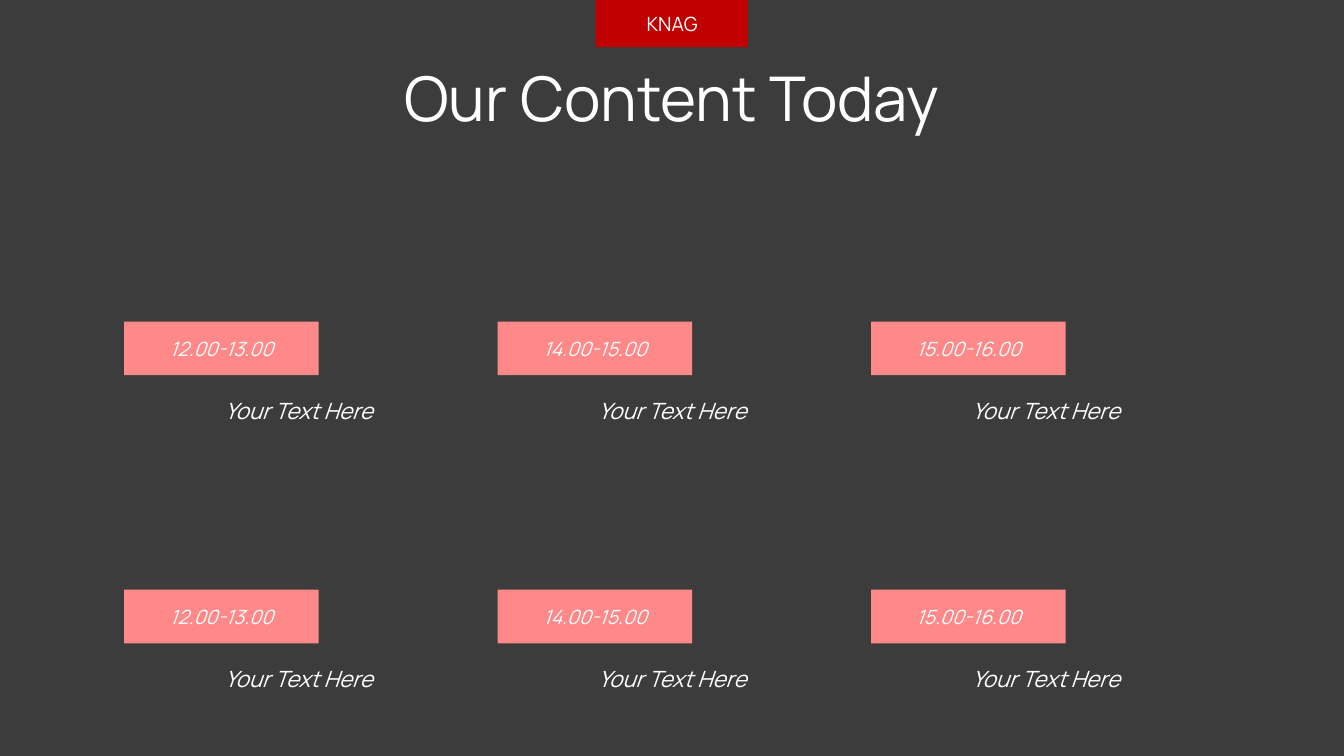
import pptx
import pptx.util
import pptx.dml.color
import pptx.enum.shapes
import pptx.enum.text

Pt = pptx.util.Pt
RGB = pptx.dml.color.RGBColor.from_string

THEME = {
    "font": "Manrope",
    "background": RGB("3C3C3C"),
    "text": RGB("FFFFFF"),
    "slot": RGB("FF8989"),
    "tab": RGB("C00000"),
    "title_size": Pt(44),
    "caption_size": Pt(16),
    "label_size": Pt(14),
}

prs = pptx.Presentation()
prs.slide_width, prs.slide_height = Pt(960), Pt(540)
s = prs.slides.add_slide(prs.slide_layouts[6])
s.background.fill.solid()
s.background.fill.fore_color.rgb = THEME["background"]


def add_bar(x, y, w, h, color):
    sp = s.shapes.add_shape(pptx.enum.shapes.MSO_SHAPE.RECTANGLE, Pt(x), Pt(y), Pt(w), Pt(h))
    sp.shadow.inherit = False
    sp.fill.solid()
    sp.fill.fore_color.rgb = color
    sp.line.fill.background()


def add_text(x, y, w, h, text, size, italic=False, spacing=1.0):
    tf = s.shapes.add_textbox(Pt(x), Pt(y), Pt(w), Pt(h)).text_frame
    tf.word_wrap = True
    tf.vertical_anchor = pptx.enum.text.MSO_ANCHOR.MIDDLE
    p = tf.paragraphs[0]
    p.alignment = pptx.enum.text.PP_ALIGN.CENTER
    p.line_spacing = spacing
    r = p.add_run()
    r.text = text
    for name, value in {"name": THEME["font"], "size": size, "italic": italic}.items():
        setattr(r.font, name, value)
    r.font.color.rgb = THEME["text"]


# Title
add_text(66, 31, 828, 83.5, "Our Content Today", THEME["title_size"], spacing=0.9)

# Agenda grid: a time bar with a caption below it
times = ["12.00-13.00", "14.00-15.00", "15.00-16.00"]
left, top = 88.7, 229.7
col_step, row_step = 266.8, 191.5
for row in range(2):
    y = top + row * row_step
    for col, time in enumerate(times):
        x = left + col * col_step
        add_bar(x, y, 139, 38.3, THEME["slot"])
        add_text(x - 11.8, y + 7.1, 162.7, 24.5, time, THEME["label_size"], italic=True)
        add_text(x + 13.5, y + 50.4, 222.5, 26.6, "Your Text Here", THEME["caption_size"], italic=True)

# Top tab
add_bar(425.5, 0, 108.7, 33.8, THEME["tab"])
add_text(411, 4.5, 138.2, 24.5, "KNAG", THEME["label_size"])

prs.save("out.pptx")
